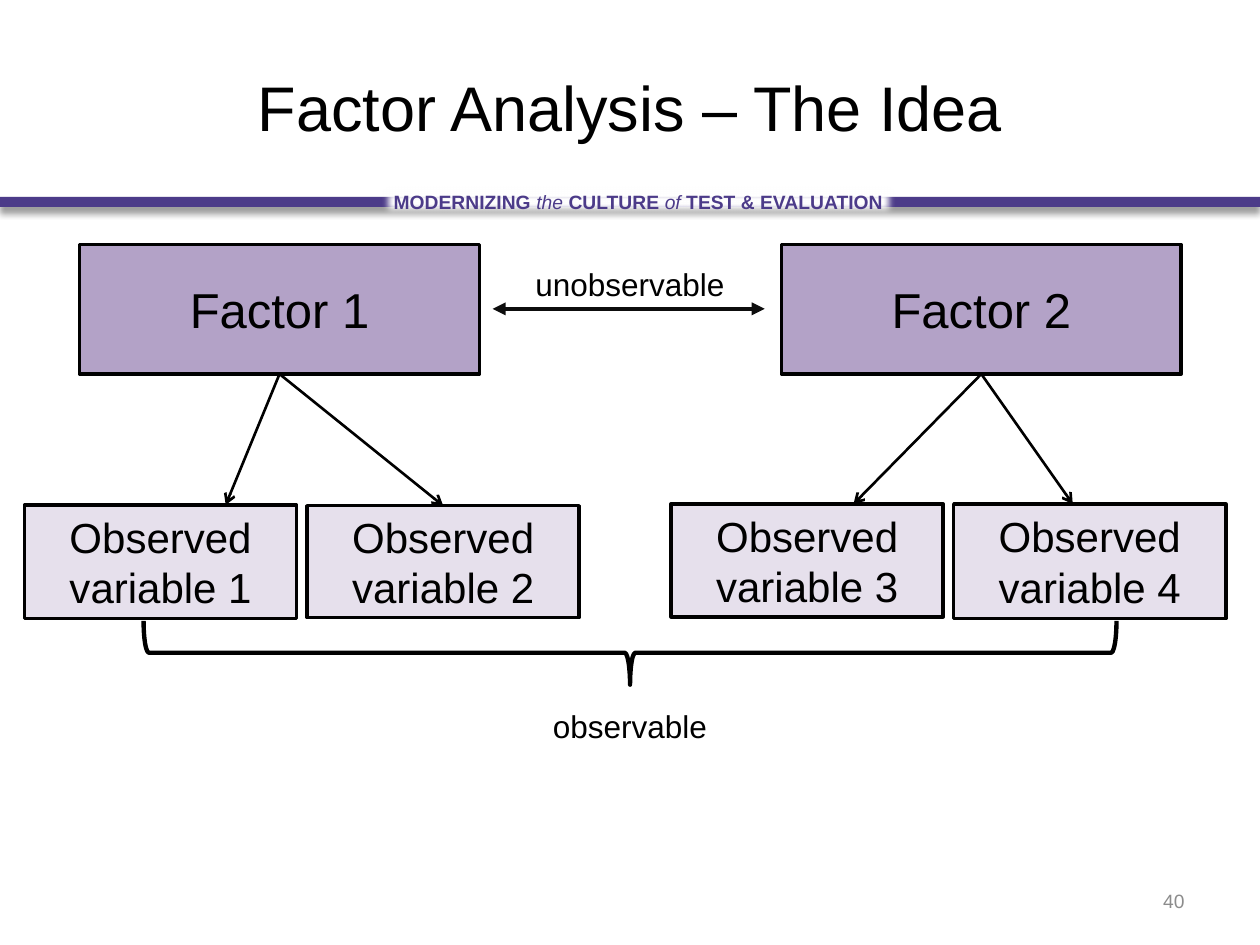
from lxml.etree import SubElement
from pptx import Presentation
from pptx.dml.color import RGBColor
from pptx.enum.shapes import MSO_CONNECTOR, MSO_SHAPE
from pptx.enum.text import MSO_ANCHOR, PP_ALIGN
from pptx.oxml.ns import qn
from pptx.util import Pt

COLORS = {
    "banner": "4C3B89",
    "white": "FFFFFF",
    "black": "000000",
    "factor": "B3A2C7",
    "variable": "E6E0EC",
    "arrow": "0D0D0D",
    "number": "8C8C8C",
}


def rgb(name):
    return RGBColor.from_string(COLORS[name])


def write(shape, runs, size, color="black", align=PP_ALIGN.CENTER,
          anchor=MSO_ANCHOR.MIDDLE, wrap=True):
    """Fill a shape with one paragraph of (text, bold, italic) runs."""
    tf = shape.text_frame
    tf.word_wrap = wrap
    tf.vertical_anchor = anchor
    p = tf.paragraphs[0]
    p.alignment = align
    for text, bold, italic in runs:
        r = p.add_run()
        r.text = text
        r.font.name = "Arial"
        r.font.size = Pt(size)
        r.font.bold = bold
        r.font.italic = italic
        r.font.color.rgb = rgb(color)


def add_shape(s, kind, left, top, width, height, fill=None, line=None):
    """Add a preset shape; without fill or line width, that part stays empty."""
    sp = s.shapes.add_shape(kind, Pt(left), Pt(top), Pt(width), Pt(height))
    sp.shadow.inherit = False
    if fill:
        sp.fill.solid()
        sp.fill.fore_color.rgb = rgb(fill)
    else:
        sp.fill.background()
    if line:
        sp.line.color.rgb = rgb("black")
        sp.line.width = Pt(line)
    else:
        sp.line.fill.background()
    return sp


def add_effect(sp, tag, **attributes):
    effects = sp._element.spPr.find(qn("a:effectLst"))
    return SubElement(effects, qn(tag), attributes)


def add_box(s, text, left, top, width, height, fill, size):
    sp = add_shape(s, MSO_SHAPE.RECTANGLE, left, top, width, height, fill, 2)
    write(sp, [(text, False, False)], size)
    return sp


def add_text(s, text, left, top, width, height, size, **style):
    sp = s.shapes.add_textbox(Pt(left), Pt(top), Pt(width), Pt(height))
    write(sp, [(text, False, False)], size, **style)


def add_arrow(s, start, end, width, color="black", **heads):
    """Add a straight line; heads maps headEnd and tailEnd to arrow types."""
    c = s.shapes.add_connector(MSO_CONNECTOR.STRAIGHT,
                               *[Pt(v) for v in (*start, *end)])
    c.line.color.rgb = rgb(color)
    c.line.width = Pt(width)
    for tag, kind in heads.items():
        SubElement(c.line._get_or_add_ln(), qn(f"a:{tag}"), {"type": kind})
    SubElement(c._element.spPr, qn("a:effectLst"))
    return c


def add_banner(s):
    bar = add_shape(s, MSO_SHAPE.RECTANGLE, 0, 112.5, 720, 5.75, "banner")
    shadow = add_effect(bar, "a:outerShdw", blurRad=str(Pt(4)),
                        dist=str(Pt(3)), dir="5400000", rotWithShape="0")
    color = SubElement(shadow, qn("a:srgbClr"), {"val": COLORS["black"]})
    SubElement(color, qn("a:alpha"), {"val": "40000"})

    label = add_shape(s, MSO_SHAPE.RECTANGLE, 216, 105, 297.5, 20.5, "white")
    add_effect(label, "a:softEdge", rad=str(Pt(5)))
    write(label, [("MODERNIZING ", True, False), ("the", False, True),
                  (" CULTURE ", True, False), ("of", False, True),
                  (" TEST & EVALUATION", True, False)],
          11, "banner", anchor=MSO_ANCHOR.TOP, wrap=False)


def add_title(s, text):
    title = s.shapes.title
    title.left, title.top, title.width, title.height = (
        Pt(v) for v in (96, 16, 528, 90))
    write(title, [(text, False, False)], 36)


def add_model(s):
    """Draw each factor with arrows to its two observed variables."""
    factor_top, factor_width, factor_height = 139.75, 228.5, 74
    # factor left, then (number, left, top, height, arrow tip x) per variable
    groups = [
        (45.5, [(1, 14, 288.5, 65, 129), (2, 175.5, 289, 64, 253.25)]),
        (446.5, [(3, 383.5, 288, 64.5, 487.75), (4, 545, 288, 65.5, 613)]),
    ]
    for number, (left, variables) in enumerate(groups, 1):
        factor = add_box(s, f"Factor {number}", left, factor_top,
                         factor_width, factor_height, "factor", 28)
        start = (left + factor_width / 2, factor_top + factor_height)
        for n, x, y, height, tip in variables:
            width = 155.5
            box = add_box(s, f"Observed variable {n}", x, y, width, height,
                          "variable", 24)
            c = add_arrow(s, start, (tip, y), 1.5, tailEnd="arrow")
            c.begin_connect(factor, 2)
            if tip == x + width / 2:
                c.end_connect(box, 0)


def main():
    prs = Presentation()
    prs.slide_width, prs.slide_height = Pt(720), Pt(540)
    s = prs.slides.add_slide(prs.slide_layouts[5])
    add_banner(s)
    add_title(s, "Factor Analysis – The Idea")
    add_model(s)

    for text, top in (("unobservable", 147.75), ("observable", 400.5)):
        add_text(s, text, 291, top, 138, 29, 18, anchor=MSO_ANCHOR.TOP)
    add_arrow(s, (281.5, 176.5), (437, 176.5), 2.5, "arrow",
              headEnd="triangle", tailEnd="triangle")
    brace = add_shape(s, MSO_SHAPE.RIGHT_BRACE, 341.75, 95, 36.5, 556, line=2.5)
    brace.rotation = 90

    add_text(s, "40", 516, 500.5, 168, 28.75, 11, color="number",
             align=PP_ALIGN.RIGHT)
    prs.save("out.pptx")


if __name__ == "__main__":
    main()
